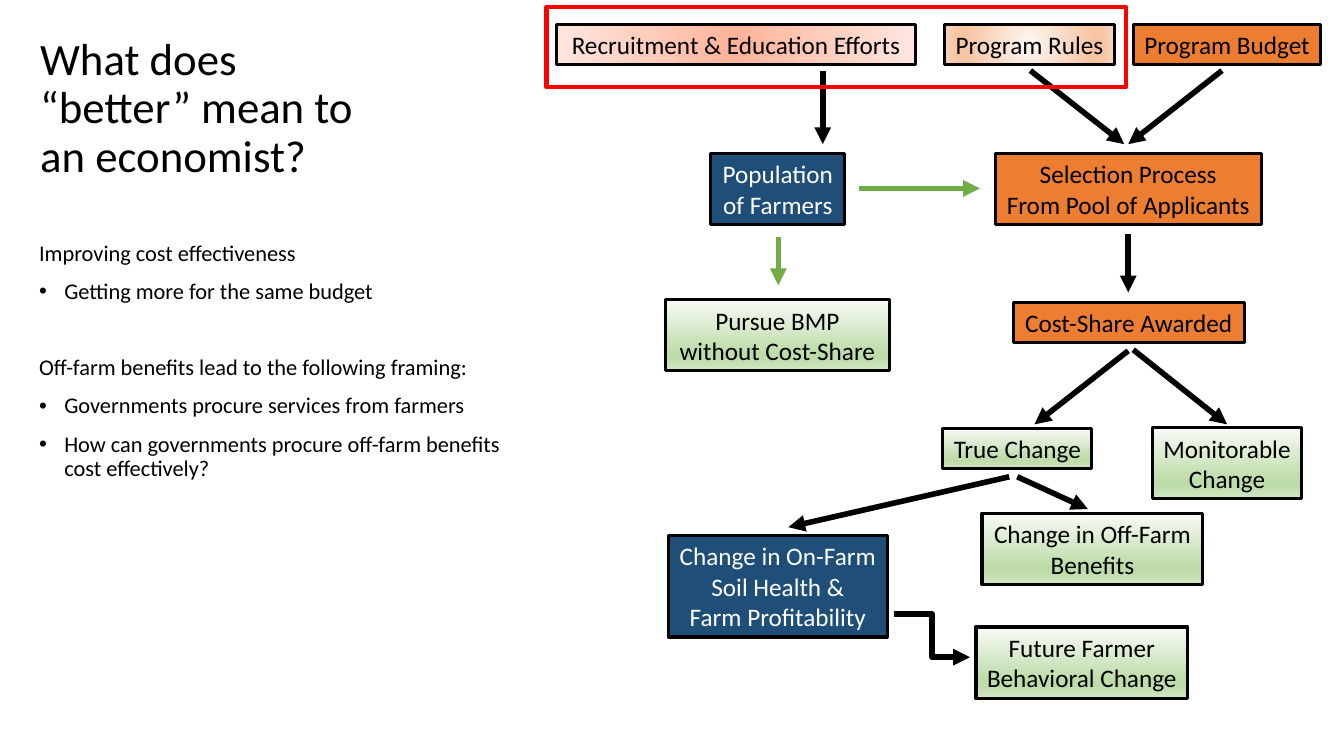
"""Builds the slide on what "better" means to an economist."""
from pptx import Presentation, oxml
from pptx import util as u
from pptx.dml.color import RGBColor
from pptx.enum import shapes, text
from pptx.oxml import ns

BLACK = RGBColor(0x00, 0x00, 0x00)
WHITE = RGBColor(0xFF, 0xFF, 0xFF)
RED = RGBColor(0xFF, 0x00, 0x00)
ORANGE = RGBColor(0xED, 0x7D, 0x31)
NAVY = RGBColor(0x1F, 0x4E, 0x79)
GREEN = RGBColor(0x70, 0xAD, 0x47)

LINEAR = '<a:lin ang="5400000" scaled="0"/>'
RADIAL = '<a:path path="circle"><a:fillToRect l="50000" t="50000" r="50000" b="50000"/></a:path>'


def stops(*pairs):
    """Pair each gradient position in percent with its colour."""
    return [(place, RGBColor.from_string(code)) for place, code in pairs]


PALE_GREEN = (stops((0, "F8FBF6"), (74, "BEDCAA"), (83, "BEDCAA"), (100, "D4E8C6")), LINEAR)
PALE_ORANGE = (stops((0, "FEF8F5"), (74, "F7C5A2"), (83, "F7C5A2"), (100, "FAD8C1")), RADIAL)
PALE_RED = (stops((0, "FFB297"), (50, "FFCEBF"), (100, "FFE6E0")), RADIAL)


def write(para, words, size=18, color=BLACK, align=None, spacing=None, before=None, bullet=False):
    """Put formatted words into a paragraph."""
    span = para.add_run()
    span.text = words
    span.font.name = "Calibri"
    span.font.size = u.Pt(size)
    span.font.color.rgb = color
    para.alignment = align
    para.line_spacing = spacing
    if before is not None:
        para.space_before = u.Pt(before)
    if bullet:
        props = para._p.get_or_add_pPr()
        props.set("marL", str(u.Inches(0.25)))
        props.set("indent", str(u.Inches(-0.25)))
        props.append(oxml.parse_xml(f'<a:buFont {ns.nsdecls("a")} typeface="Arial"/>'))
        props.append(oxml.parse_xml(f'<a:buChar {ns.nsdecls("a")} char="•"/>'))


class FlowSlide:
    """Holds the drawing style and the current page."""

    def __init__(self, page, outline=2.25, arrow_width=4):
        """Keep the page and the line widths in points."""
        self.page = page
        self.outline = outline
        self.arrow_width = arrow_width

    def text_block(self, place, lines, anchor=text.MSO_ANCHOR.TOP):
        """Add a wrapped text box from (words, format) pairs."""
        frame = self.page.shapes.add_textbox(*map(u.Inches, place)).text_frame
        frame.word_wrap = True
        frame.vertical_anchor = anchor
        for index, (words, style) in enumerate(lines):
            para = frame.add_paragraph() if index else frame.paragraphs[0]
            write(para, words, spacing=0.9, **style)

    def outlined(self, place, color, width):
        """Add an unfilled rectangle with an outline."""
        box = self.page.shapes.add_shape(shapes.MSO_SHAPE.RECTANGLE, *map(u.Inches, place))
        box.shadow.inherit = False
        box.fill.background()
        box.line.color.rgb = color
        box.line.width = u.Pt(width)
        return box

    def gradient(self, box, colors, direction):
        """Fill a box with a gradient of several stops."""
        marks = "".join(f'<a:gs pos="{place * 1000}"><a:srgbClr val="{color}"/></a:gs>'
                        for place, color in colors)
        box.fill.gradient()
        props = box._element.spPr
        props.replace(props.find(ns.qn("a:gradFill")), oxml.parse_xml(
            f'<a:gradFill {ns.nsdecls("a")} rotWithShape="1">'
            f'<a:gsLst>{marks}</a:gsLst>{direction}</a:gradFill>'))

    def node(self, place, lines, fill):
        """Add a flow chart box with one paragraph per line."""
        box = self.outlined(place, BLACK, self.outline)
        if isinstance(fill, RGBColor):
            box.fill.solid()
            box.fill.fore_color.rgb = fill
        else:
            self.gradient(box, *fill)
        frame = box.text_frame
        frame.word_wrap = False
        frame.auto_size = text.MSO_AUTO_SIZE.SHAPE_TO_FIT_TEXT
        for index, words in enumerate(lines):
            para = frame.add_paragraph() if index else frame.paragraphs[0]
            write(para, words, color=WHITE if fill == NAVY else BLACK, align=text.PP_ALIGN.CENTER)

    def arrow(self, start, end, color=BLACK, kind=shapes.MSO_CONNECTOR.STRAIGHT):
        """Add a connector with a triangle at its end."""
        link = self.page.shapes.add_connector(kind, *map(u.Inches, start + end))
        link.line.color.rgb = color
        link.line.width = u.Pt(self.arrow_width)
        link.line._get_or_add_ln().append(
            oxml.parse_xml(f'<a:tailEnd {ns.nsdecls("a")} type="triangle"/>'))
        link._element.spPr.append(oxml.parse_xml(f'<a:effectLst {ns.nsdecls("a")}/>'))


NODES = [
    ((11.24, 0.24, 1.86, 0.4), ["Program Budget"], ORANGE),
    ((9.37, 0.24, 1.68, 0.4), ["Program Rules"], PALE_ORANGE),
    ((5.52, 0.24, 3.56, 0.4), ["Recruitment & Education Efforts"], PALE_RED),
    ((9.87, 1.52, 2.64, 0.71), ["Selection Process", "From Pool of Applicants"], ORANGE),
    ((7.05, 1.52, 1.33, 0.71), ["Population", "of Farmers"], NAVY),
    ((6.6, 2.97, 2.22, 0.71), ["Pursue BMP", "without Cost-Share"], PALE_GREEN),
    ((10.05, 3, 2.29, 0.4), ["Cost-Share Awarded"], ORANGE),
    ((9.35, 4.25, 1.48, 0.4), ["True Change"], PALE_GREEN),
    ((11.43, 4.24, 1.48, 0.71), ["Monitorable", "Change"], PALE_GREEN),
    ((6.63, 5.31, 2.17, 1.01), ["Change in On-Farm", "Soil Health &", "Farm Profitability"], NAVY),
    ((9.74, 5.09, 2.19, 0.71), ["Change in Off-Farm", "Benefits"], PALE_GREEN),
    ((9.68, 6.22, 2.1, 0.71), ["Future Farmer", "Behavioral Change"], PALE_GREEN),
]

ARROWS = [
    ((12.12, 0.7), (11.19, 1.43)),
    ((10.22, 0.7), (11.15, 1.43)),
    ((8.16, 0.7), (8.16, 1.43)),
    ((8.52, 1.87), (9.72, 1.87), GREEN),
    ((7.72, 2.35), (7.72, 2.83), GREEN),
    ((11.19, 2.32), (11.19, 2.9)),
    ((11.19, 3.48), (10.26, 4.21)),
    ((11.24, 3.47), (12.17, 4.21)),
    ((10.01, 4.73), (7.82, 5.23)),
    ((10.09, 4.73), (10.79, 5.05)),
    ((8.87, 6.09), (9.62, 6.52), BLACK, shapes.MSO_CONNECTOR.ELBOW),
]

HEADING = {"size": 16, "before": 10}
POINT = {**HEADING, "bullet": True}
BODY = [
    ("Improving cost effectiveness", HEADING),
    ("Getting more for the same budget", POINT),
    ("Off-farm benefits lead to the following framing:", {**HEADING, "before": 37.4}),
    ("Governments procure services from farmers", POINT),
    ("How can governments procure off-farm benefits cost effectively?", POINT),
]


def main():
    """Draw the text, the flow chart and the highlight, then save."""
    deck = Presentation()
    deck.slide_width, deck.slide_height = u.Inches(13.33), u.Inches(7.5)
    slide = FlowSlide(deck.slides.add_slide(deck.slide_layouts[6]))
    slide.text_block((0.3, 0.24, 3.56, 1.69),
                     [("What does “better” mean to an economist?", {"size": 32})],
                     anchor=text.MSO_ANCHOR.MIDDLE)
    slide.text_block((0.29, 2.35, 5.14, 4.64), BODY)
    for node in NODES:
        slide.node(*node)
    for arrow in ARROWS:
        slide.arrow(*arrow)
    slide.outlined((5.42, 0.07, 5.75, 0.79), RED, 3)
    deck.save("out.pptx")


if __name__ == "__main__":
    main()
